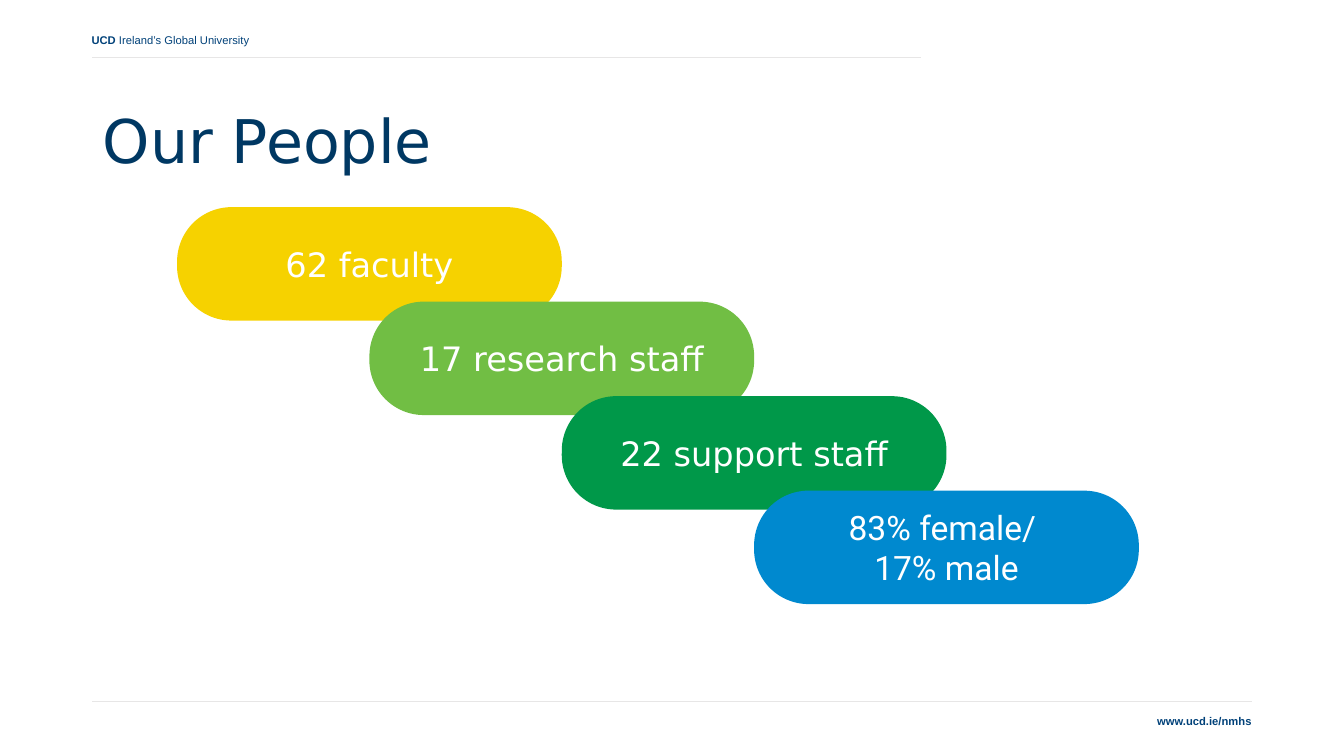
from dataclasses import dataclass

from lxml.etree import SubElement
from pptx import Presentation
from pptx.dml.color import RGBColor as Rgb
from pptx.enum.shapes import MSO_CONNECTOR as Connector, MSO_SHAPE as Preset
from pptx.enum.text import MSO_ANCHOR as Anchor, MSO_AUTO_SIZE as AutoSize, PP_ALIGN as Align
from pptx.oxml.ns import qn
from pptx.util import Pt


@dataclass(frozen=True)
class Theme:
    navy: str = "003863"
    brand_blue: str = "004179"
    rule_grey: str = "E7E6E6"
    white: str = "FFFFFF"
    yellow: str = "F6D200"
    lime: str = "71BE44"
    green: str = "009849"
    sky: str = "0089CF"
    small_font: str = "Arial"
    main_font: str = "DejaVu Sans"
    ratio_font: str = "Roboto"
    small_size: float = 8
    pill_size: float = 24
    title_size: float = 43
    rule_width: float = 0.5


THEME = Theme()

# Text lines, font and fill of each step
STAFF_GROUPS = [
    (["62 faculty"], THEME.main_font, THEME.yellow),
    (["17 research staff"], THEME.main_font, THEME.lime),
    (["22 support staff"], THEME.main_font, THEME.green),
    (["83% female/ ", "17% male"], THEME.ratio_font, THEME.sky),
]


def add_run(paragraph, text, font, size, color, bold=False):
    run = paragraph.add_run()
    run.text = text
    run.font.name = font
    run.font.size = Pt(size)
    run.font.bold = bold
    run.font.color.rgb = Rgb.from_string(color)


def add_rule(slide, left, right, y):
    rule = slide.shapes.add_connector(Connector.STRAIGHT, Pt(left), Pt(y), Pt(right), Pt(y))
    rule.line.color.rgb = Rgb.from_string(THEME.rule_grey)
    rule.line.width = Pt(THEME.rule_width)
    SubElement(rule.element.spPr, qn("a:effectLst"))


def add_small_text(slide, box, parts, align):
    small_text = slide.shapes.add_textbox(*map(Pt, box))
    frame = small_text.text_frame
    frame.word_wrap = True
    frame.vertical_anchor = Anchor.MIDDLE
    paragraph = frame.paragraphs[0]
    paragraph.alignment = align
    for text, bold in parts:
        add_run(paragraph, text, THEME.small_font, THEME.small_size, THEME.brand_blue, bold)


def add_header(slide, left, top, width):
    add_small_text(slide, (left - 7.7, top, 324, 28.8),
                   [("UCD", True), (" Ireland’s Global University", False)], Align.LEFT)
    add_rule(slide, left, left + width, top + 26.6)


def add_footer(slide, left, top, width):
    add_rule(slide, left, left + width, top)
    add_small_text(slide, (left + width - 316.8, top - 0.7, 324, 28.8),
                   [("www.ucd.ie/nmhs", True)], Align.RIGHT)


def add_title(slide, left, top, width, height):
    title = slide.shapes.title
    title.left, title.top, title.width, title.height = map(Pt, (left, top, width, height))
    frame = title.text_frame
    frame.auto_size = AutoSize.NONE
    frame.vertical_anchor = Anchor.MIDDLE
    paragraph = frame.paragraphs[0]
    paragraph.alignment = Align.LEFT
    paragraph.line_spacing = 0.9
    add_run(paragraph, "Our People", THEME.main_font, THEME.title_size, THEME.navy)


def add_pill(slide, box, lines, font, fill):
    pill = slide.shapes.add_shape(Preset.ROUNDED_RECTANGLE, *map(Pt, box))
    pill.adjustments[0] = 0.48
    pill.shadow.inherit = False
    pill.fill.solid()
    pill.fill.fore_color.rgb = Rgb.from_string(fill)
    pill.line.fill.background()
    frame = pill.text_frame
    frame.word_wrap = True
    frame.vertical_anchor = Anchor.MIDDLE
    frame.margin_top = frame.margin_bottom = Pt(0)
    for index, line in enumerate(lines):
        paragraph = frame.add_paragraph() if index else frame.paragraphs[0]
        paragraph.alignment = Align.CENTER
        add_run(paragraph, line, font, THEME.pill_size, THEME.white)


def add_staircase(slide, left, top, width, height):
    # Each pill starts at the middle of the one above and overlaps its lower edge
    pill_height = 81
    step_x = width / (len(STAFF_GROUPS) + 1)
    step_y = (height - pill_height) / (len(STAFF_GROUPS) - 1)
    for index, (lines, font, fill) in enumerate(STAFF_GROUPS):
        box = (left + index * step_x, top + index * step_y, 2 * step_x, pill_height)
        add_pill(slide, box, lines, font, fill)


def main():
    deck = Presentation()
    deck.slide_width, deck.slide_height = Pt(960), Pt(540)
    slide = deck.slides.add_slide(deck.slide_layouts[5])
    add_header(slide, 66, 14.4, 592)
    add_footer(slide, 66, 501, 828)
    add_staircase(slide, 126.5, 148, 687, 283.5)
    add_title(slide, 66.2, 50.4, 828, 104.4)
    deck.save("out.pptx")


if __name__ == "__main__":
    main()
